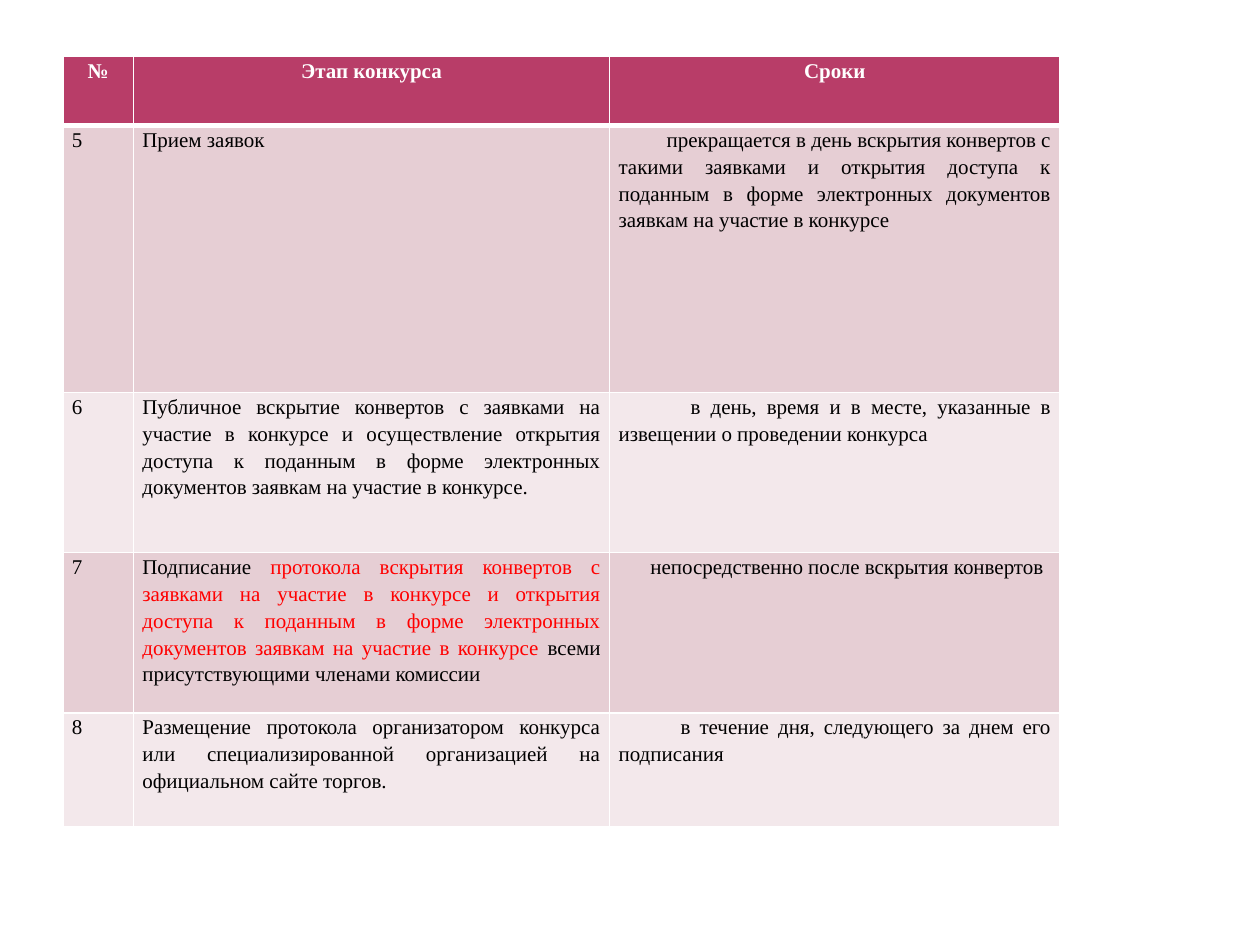
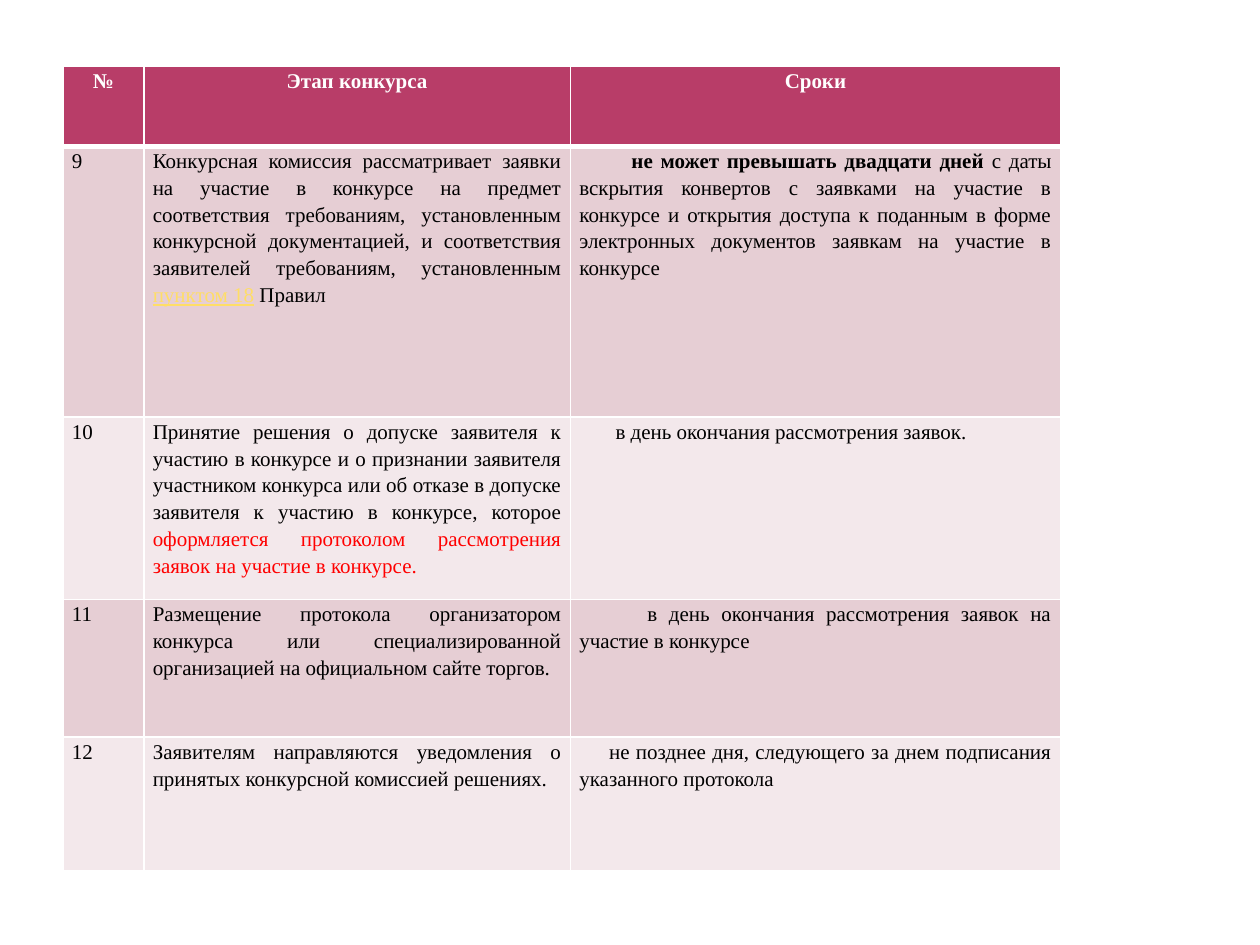
from dataclasses import dataclass

from lxml import etree
from pptx import Presentation
from pptx.dml.color import RGBColor
from pptx.enum.text import PP_ALIGN
from pptx.oxml.ns import qn
from pptx.util import Cm, Pt

CENTER, JUSTIFY = PP_ALIGN.CENTER, PP_ALIGN.JUSTIFY
BLANK_LAYOUT = 6


@dataclass(frozen=True)
class Theme:
    font: str = "Times New Roman"
    size: int = 12
    line_spacing: float = 1.15
    header: str = "B83D68"
    bands: tuple = ("E6CED4", "F3E8EB")
    white: str = "FFFFFF"
    text: str = "000000"
    accent: str = "FF0000"
    reference: str = "FFDE66"
    border: int = 1
    header_border: int = 3


THEME = Theme()
HEADERS = ("№", "Этап конкурса", "Сроки")
TABLE_LEFT = 1.27

# Run styles: a run is plain text or a (text, style) pair
ACCENT = {"color": THEME.accent}
REFERENCE = {"color": THEME.reference, "underline": True}
STRONG = {"bold": True}

PUBLICATION = ("Размещение протокола организатором конкурса или "
               "специализированной организацией на официальном сайте торгов.")

# Stage rows: number, stage runs, deadline runs, first-line indent of the deadline (cm)
APPLICATION_STAGES = [
    ("5", ["Прием заявок"],
     ["прекращается в день вскрытия конвертов с такими заявками и открытия доступа "
      "к поданным в форме электронных документов заявкам на участие в конкурсе"], 0.97),
    ("6", ["Публичное вскрытие конвертов с заявками на участие в конкурсе и "
           "осуществление открытия доступа к поданным в форме электронных документов "
           "заявкам на участие в конкурсе."],
     ["в день, время и в месте, указанные в извещении о проведении конкурса"], 1.45),
    ("7", ["Подписание ",
           ("протокола вскрытия конвертов с заявками на участие в конкурсе и открытия "
            "доступа к поданным в форме электронных документов заявкам на участие "
            "в конкурсе ", ACCENT),
           "всеми присутствующими членами комиссии"],
     ["непосредственно после вскрытия конвертов"], 0.64),
    ("8", [PUBLICATION],
     ["в течение дня, следующего за днем его подписания"], 1.25),
]

REVIEW_STAGES = [
    ("9", ["Конкурсная комиссия рассматривает заявки на участие в конкурсе на предмет "
           "соответствия требованиям, установленным конкурсной документацией, и "
           "соответствия заявителей требованиям, установленным ",
           ("пунктом 18", REFERENCE), " Правил"],
     [("не может превышать двадцати дней", STRONG),
      " с даты вскрытия конвертов с заявками на участие в конкурсе и открытия доступа "
      "к поданным в форме электронных документов заявкам на участие в конкурсе"], 1.05),
    ("10", ["Принятие решения о допуске заявителя к участию в конкурсе и о признании "
            "заявителя участником конкурса или об отказе в допуске заявителя к участию "
            "в конкурсе, которое ",
            ("оформляется протоколом рассмотрения заявок на участие в конкурсе.", ACCENT)],
     ["в день окончания рассмотрения заявок."], 0.73),
    ("11", [PUBLICATION],
     ["в день окончания рассмотрения заявок на участие в конкурсе"], 1.37),
    ("12", ["Заявителям направляются уведомления о принятых конкурсной комиссией "
            "решениях."],
     ["не позднее дня, следующего за днем подписания указанного протокола"], 0.6),
]


def set_borders(cell, top, bottom):
    """Draw white borders; the side borders are always thin."""
    properties = cell._tc.get_or_add_tcPr()
    widths = {"a:lnL": THEME.border, "a:lnR": THEME.border, "a:lnT": top, "a:lnB": bottom}
    for tag, width in widths.items():
        line = etree.SubElement(properties, qn(tag), w=str(Pt(width)))
        fill = etree.SubElement(line, qn("a:solidFill"))
        etree.SubElement(fill, qn("a:srgbClr"), val=THEME.white)


def add_run(paragraph, text, color, bold=False, underline=False):
    run = paragraph.add_run()
    run.text = text
    run.font.color.rgb = RGBColor.from_string(color)
    run.font.bold = bold
    run.font.underline = underline


def fill_cell(cell, runs, fill, alignment=JUSTIFY, indent=0, **base_style):
    cell.margin_left = cell.margin_right = Cm(0.18)
    cell.margin_top = cell.margin_bottom = 0
    cell.fill.solid()
    cell.fill.fore_color.rgb = RGBColor.from_string(fill)

    paragraph = cell.text_frame.paragraphs[0]
    paragraph.alignment = alignment
    paragraph.line_spacing = THEME.line_spacing
    if indent:
        paragraph._p.get_or_add_pPr().set("indent", str(Cm(indent)))
    paragraph.font.name = THEME.font
    paragraph.font.size = Pt(THEME.size)
    for run in runs:
        text, style = (run, {}) if isinstance(run, str) else run
        add_run(paragraph, text, **{"color": THEME.text, **base_style, **style})


def add_stage_table(slide, top, column_widths, row_heights, stages):
    table = slide.shapes.add_table(
        len(row_heights), len(column_widths), Cm(TABLE_LEFT), Cm(top),
        Cm(sum(column_widths)), Cm(sum(row_heights))).table
    for column, width in zip(table.columns, column_widths):
        column.width = Cm(width)
    for row, height in zip(table.rows, row_heights):
        row.height = Cm(height)

    # Header row
    for cell, title in zip(table.rows[0].cells, HEADERS):
        set_borders(cell, THEME.border, THEME.header_border)
        fill_cell(cell, [title], THEME.header, CENTER, color=THEME.white, bold=True)

    # Banded stage rows
    for index, (number, stage, deadline, indent) in enumerate(stages):
        cells = table.rows[index + 1].cells
        band = THEME.bands[index % 2]
        contents = (([number], 0), (stage, 0), (deadline, indent))
        for cell, (runs, first_line) in zip(cells, contents):
            set_borders(cell, THEME.border if index else THEME.header_border, THEME.border)
            fill_cell(cell, runs, band, indent=first_line)


def main():
    presentation = Presentation()
    presentation.slide_width, presentation.slide_height = Cm(25.4), Cm(19.05)
    layout = presentation.slide_layouts[BLANK_LAYOUT]

    # Stages 5–8: applications and opening of envelopes
    add_stage_table(presentation.slides.add_slide(layout), 1.13, (1.42, 9.6, 9.08),
                    (1.4, 5.38, 3.23, 3.23, 2.29), APPLICATION_STAGES)

    # Stages 9–12: review and notification
    add_stage_table(presentation.slides.add_slide(layout), 1.33, (1.63, 8.6, 9.88),
                    (1.62, 5.46, 3.68, 2.77, 2.69), REVIEW_STAGES)

    presentation.save("out.pptx")


if __name__ == "__main__":
    main()
